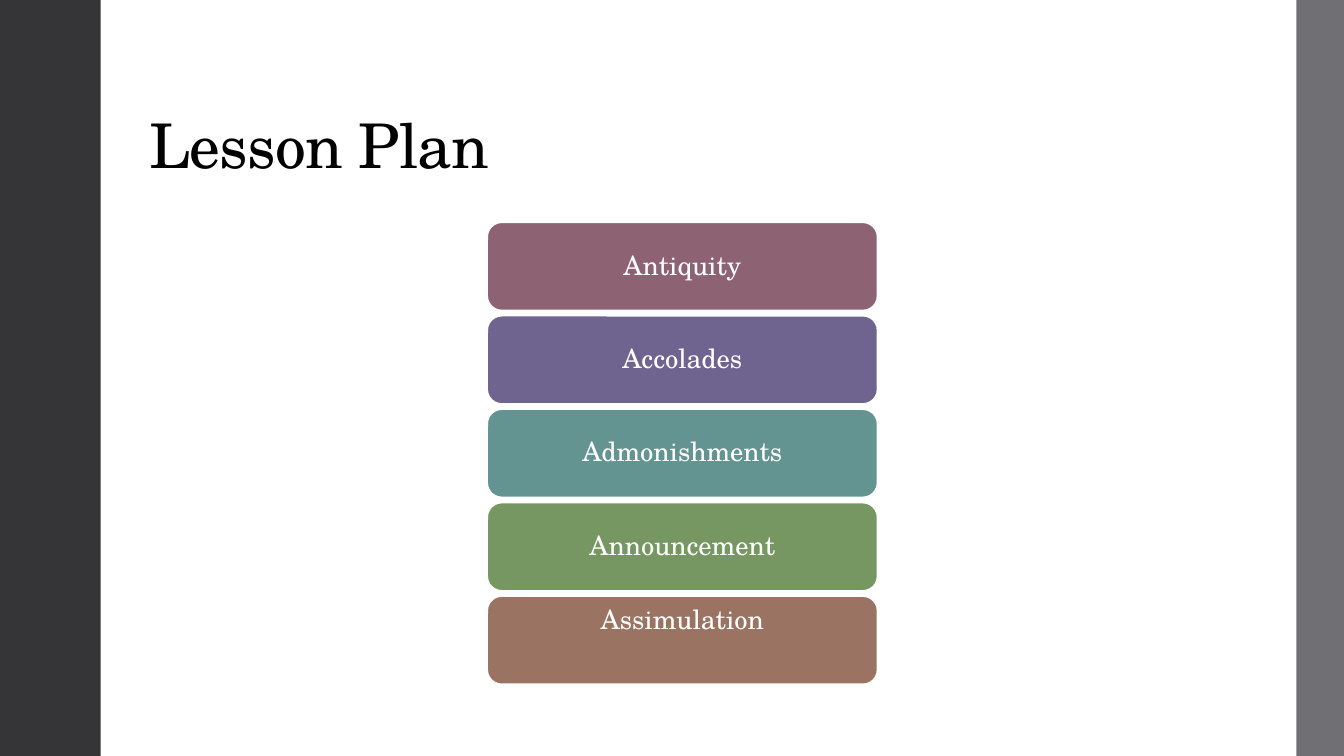
from dataclasses import dataclass

from pptx import Presentation
from pptx.dml.color import RGBColor
from pptx.enum.shapes import MSO_SHAPE
from pptx.enum.text import MSO_ANCHOR, PP_ALIGN
from pptx.shapes.autoshape import Shape
from pptx.slide import Slide
from pptx.text.text import _Run
from pptx.util import Pt

COLOURS = {
    "paper": "FFFFFF",
    "ink": "000000",
    "left band": "353537",
    "right band": "6F6F74",
    "plum": "8D6374",
    "violet": "6F6390",
    "teal": "639491",
    "green": "769762",
    "brown": "9B7362",
}
FONT = "TeX Gyre Schola"
PAGE_WIDTH, PAGE_HEIGHT = 960, 540
LESSON_LEFT, LESSON_TOP = 347.9, 158.7
LESSON_WIDTH, LESSON_HEIGHT = 279, 63.2
LESSON_PITCH = 66.75


@dataclass(frozen=True)
class Band:
    left: float
    width: float
    colour: str


@dataclass(frozen=True)
class Lesson:
    name: str
    colour: str
    bottom_inset: float = 3


BANDS = [Band(0, 72, "left band"), Band(926, 34, "right band")]
LESSONS = [
    Lesson("Antiquity", "plum"),
    Lesson("Accolades", "violet"),
    Lesson("Admonishments", "teal"),
    Lesson("Announcement", "green"),
    Lesson("Assimulation", "brown", bottom_inset=30),
]


def colour(name: str) -> RGBColor:
    return RGBColor.from_string(COLOURS[name])


def add_filled(page: Slide, kind: MSO_SHAPE, left: float, top: float,
               width: float, height: float, fill: str) -> Shape:
    box = page.shapes.add_shape(kind, Pt(left), Pt(top), Pt(width), Pt(height))
    box.shadow.inherit = False
    box.fill.solid()
    box.fill.fore_color.rgb = colour(fill)
    box.line.fill.background()
    return box


def write(box: Shape, text: str, size: float, ink: str,
          alignment: PP_ALIGN, anchor: MSO_ANCHOR) -> _Run:
    frame = box.text_frame
    frame.word_wrap = True
    frame.vertical_anchor = anchor
    para = frame.paragraphs[0]
    para.alignment = alignment
    para.line_spacing = 0.9
    span = para.add_run()
    span.text = text
    span.font.name = FONT
    span.font.size = Pt(size)
    span.font.color.rgb = colour(ink)
    return span


def add_title(page: Slide, text: str) -> None:
    box = page.shapes.add_textbox(Pt(99.4), Pt(28.8), Pt(776), Pt(104.4))
    span = write(box, text, 44, "ink", PP_ALIGN.LEFT, MSO_ANCHOR.BOTTOM)
    span.font._element.set("spc", "-50")


def add_band(page: Slide, band: Band) -> None:
    add_filled(page, MSO_SHAPE.RECTANGLE, band.left, 0, band.width,
               PAGE_HEIGHT, band.colour)


def add_lesson(page: Slide, lesson: Lesson, position: int) -> None:
    top = LESSON_TOP + position * LESSON_PITCH
    box = add_filled(page, MSO_SHAPE.ROUNDED_RECTANGLE, LESSON_LEFT, top,
                     LESSON_WIDTH, LESSON_HEIGHT, lesson.colour)
    box.line.color.rgb = colour("paper")
    box.line.width = Pt(1.35)
    frame = box.text_frame
    frame.margin_left = frame.margin_right = Pt(6)
    frame.margin_top = Pt(3)
    frame.margin_bottom = Pt(lesson.bottom_inset)
    write(box, lesson.name, 19, "paper", PP_ALIGN.CENTER, MSO_ANCHOR.MIDDLE)


def main() -> None:
    deck = Presentation()
    deck.slide_width, deck.slide_height = Pt(PAGE_WIDTH), Pt(PAGE_HEIGHT)
    page = deck.slides.add_slide(deck.slide_layouts[6])
    page.background.fill.solid()
    page.background.fill.fore_color.rgb = colour("paper")
    add_title(page, "Lesson Plan")
    for band in BANDS:
        add_band(page, band)
    for position, lesson in enumerate(LESSONS):
        add_lesson(page, lesson, position)
    deck.save("out.pptx")


if __name__ == "__main__":
    main()
